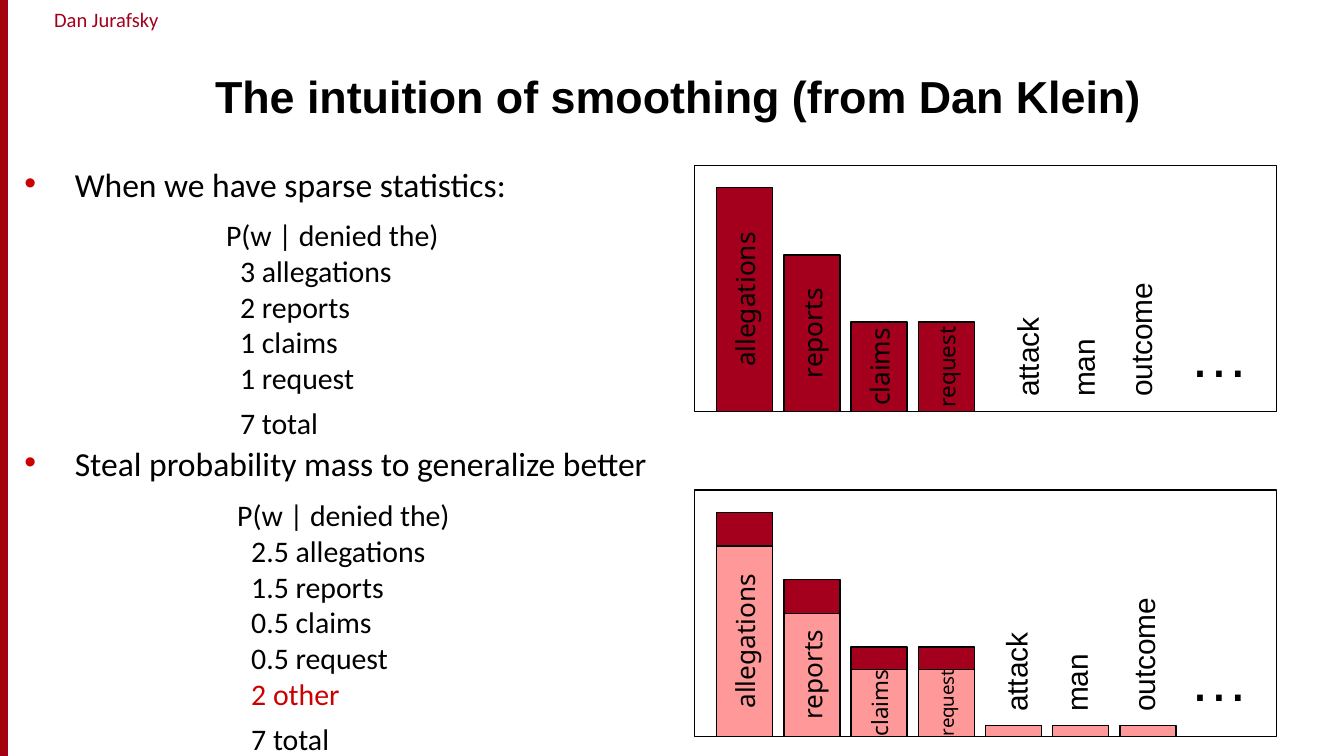
from lxml.etree import SubElement
from pptx import Presentation
from pptx.dml.color import RGBColor
from pptx.enum.shapes import MSO_SHAPE
from pptx.enum.text import MSO_ANCHOR, MSO_AUTO_SIZE, PP_ALIGN
from pptx.oxml.ns import qn
from pptx.util import Emu, Pt

PX = 9525
BLACK = RGBColor(0x00, 0x00, 0x00)
CRIMSON = RGBColor(0xA4, 0x00, 0x1D)
EDGE_RED = RGBColor(0xA4, 0x05, 0x08)
RED = RGBColor(0xCC, 0x00, 0x00)
PINK = RGBColor(0xFF, 0x99, 0x99)

BAR_WIDTH, BAR_PITCH, BAR_MARGIN = 40, 48, 16
LABEL_WIDTH, LABEL_HEIGHT = 120, 36
FULL_HEIGHTS = (160, 112, 64, 64)
KEPT_HEIGHTS = (136, 88, 48, 48, 8, 8, 8)
SEEN_WORDS = ("allegations", "reports", "claims", "request")
UNSEEN_WORDS = ("attack", "man", "outcome")


def px(*lengths):
    """Turn px lengths into EMU."""
    return [Emu(length * PX) for length in lengths]


def set_font(paragraph, size, name="Calibri", color=BLACK, bold=False):
    """Format all the text of a paragraph."""
    font = paragraph.font
    font.size, font.name, font.bold = Pt(size), name, bold
    font.color.rgb = color


def add_rectangle(page, left, top, width, height, fill=None, line=BLACK):
    """Add a flat outlined rectangle."""
    shape = page.shapes.add_shape(MSO_SHAPE.RECTANGLE, *px(left, top, width, height))
    shape.shadow.inherit = False
    if fill is None:
        shape.fill.background()
    else:
        shape.fill.solid()
        shape.fill.fore_color.rgb = fill
    shape.line.color.rgb = line
    shape.line.width = Pt(0.75)
    return shape


def add_text(page, left, top, width, height, text, size, name="Calibri", color=BLACK):
    """Add a wrapping text box with one paragraph."""
    box = page.shapes.add_textbox(*px(left, top, width, height))
    box.text_frame.word_wrap = True
    para = box.text_frame.paragraphs[0]
    para.text = text
    set_font(para, size, name, color)
    return box


def add_header(page, left, top, width, height):
    """Add the author name and the red edge of the page."""
    box = add_text(page, left + 8, top, 136, 28, "Dan Jurafsky", 11, color=CRIMSON)
    box.text_frame.margin_left = box.text_frame.margin_right = 0
    box.text_frame.paragraphs[0].alignment = PP_ALIGN.CENTER
    add_rectangle(page, left, top, 5, height, EDGE_RED, CRIMSON)


def add_title(page, left, top, width, height):
    """Place and format the title placeholder."""
    title = page.shapes.title
    title.left, title.top, title.width, title.height = px(left, top, width, height)
    frame = title.text_frame
    frame.text = "The intuition of smoothing (from Dan Klein)"
    frame.vertical_anchor = MSO_ANCHOR.BOTTOM
    frame.auto_size = MSO_AUTO_SIZE.NONE
    frame.paragraphs[0].alignment = PP_ALIGN.LEFT
    set_font(frame.paragraphs[0], 24, "Arial", bold=True)


def add_bullets(page, left, top, width, height, items, gap):
    """Add bulleted statements with a wide gap between them."""
    box = page.shapes.add_textbox(*px(left, top, width, height))
    frame = box.text_frame
    frame.word_wrap = True
    for index, item in enumerate(items):
        para = frame.add_paragraph() if index else frame.paragraphs[0]
        para.text = item
        para.line_spacing = 0.7
        if index:
            para.space_before = Pt(gap)
        properties = para._p.get_or_add_pPr()
        properties.set("marL", str(36 * PX))
        properties.set("indent", str(-36 * PX))
        bullet_color = SubElement(properties, qn("a:buClr"))
        SubElement(bullet_color, qn("a:srgbClr")).set("val", str(RED))
        SubElement(properties, qn("a:buFont")).set("typeface", "Arial")
        SubElement(properties, qn("a:buChar")).set("char", "•")
        set_font(para, 18)


def add_counts(page, left, top, width, height, counts, accent=None):
    """List the counts under their heading, with the total set apart."""
    box = add_text(page, left, top, width, height, "P(w | denied the)", 16)
    for count in (*counts, "7 total"):
        para = box.text_frame.add_paragraph()
        para.text = count
        para._p.get_or_add_pPr().set("marL", str(10 * PX))
        set_font(para, 16, color=RED if count == accent else BLACK)
    para.space_before = Pt(5)


def add_bar(page, center, bottom, length, fill, word="", size=14):
    """Stand a bar on its base line, with its word running upwards."""
    bar = add_rectangle(page, center - length // 2, bottom - (length + BAR_WIDTH) // 2,
                        length, BAR_WIDTH, fill)
    bar.rotation = 270
    if word:
        frame = bar.text_frame
        frame.word_wrap = False
        frame.vertical_anchor = MSO_ANCHOR.MIDDLE
        para = frame.paragraphs[0]
        para.text = word
        para.alignment = PP_ALIGN.CENTER
        set_font(para, size, "Noto Sans")


def add_distribution(page, left, top, width, height, layers, label_centers, label_middle):
    """Draw a framed distribution with layered bars and unseen words."""
    add_rectangle(page, left, top, width, height)
    for fill, lengths, sizes in layers:
        for index, length in enumerate(lengths):
            center = left + BAR_MARGIN + BAR_WIDTH // 2 + index * BAR_PITCH
            labelled = index < len(sizes)
            add_bar(page, center, top + height, length, fill,
                    SEEN_WORDS[index] if labelled else "",
                    sizes[index] if labelled else 14)
    for word, center in zip(UNSEEN_WORDS, label_centers):
        label = add_text(page, left + center - LABEL_WIDTH // 2,
                         top + label_middle - LABEL_HEIGHT // 2,
                         LABEL_WIDTH, LABEL_HEIGHT, word, 16, "Arial")
        label.rotation = 270
    add_text(page, left + 344, top + 104, 56, 60, "…", 32, "Arial")


def main():
    """Build the slide and save it."""
    deck = Presentation()
    deck.slide_width, deck.slide_height = px(960, 540)
    page = deck.slides.add_slide(deck.slide_layouts[5])
    add_header(page, 0, 0, 960, 540)
    add_title(page, 144, 14, 784, 78)
    add_bullets(page, 8, 120, 864, 424,
                ("When we have sparse statistics:",
                 "Steal probability mass to generalize better"), 134.6)
    add_counts(page, 152, 150, 256, 171,
               ("3 allegations", "2 reports", "1 claims", "1 request"))
    add_counts(page, 160, 350, 256, 190,
               ("2.5 allegations", "1.5 reports", "0.5 claims", "0.5 request", "2 other"),
               "2 other")
    add_distribution(page, 496, 118, 416, 176,
                     [(CRIMSON, FULL_HEIGHTS, (14, 14, 14, 12))],
                     (238, 278, 319), 115)
    add_distribution(page, 496, 350, 416, 176,
                     [(CRIMSON, FULL_HEIGHTS, ()),
                      (PINK, KEPT_HEIGHTS, (14, 14, 12, 10))],
                     (230, 273, 321), 108)
    deck.save("out.pptx")


if __name__ == "__main__":
    main()
